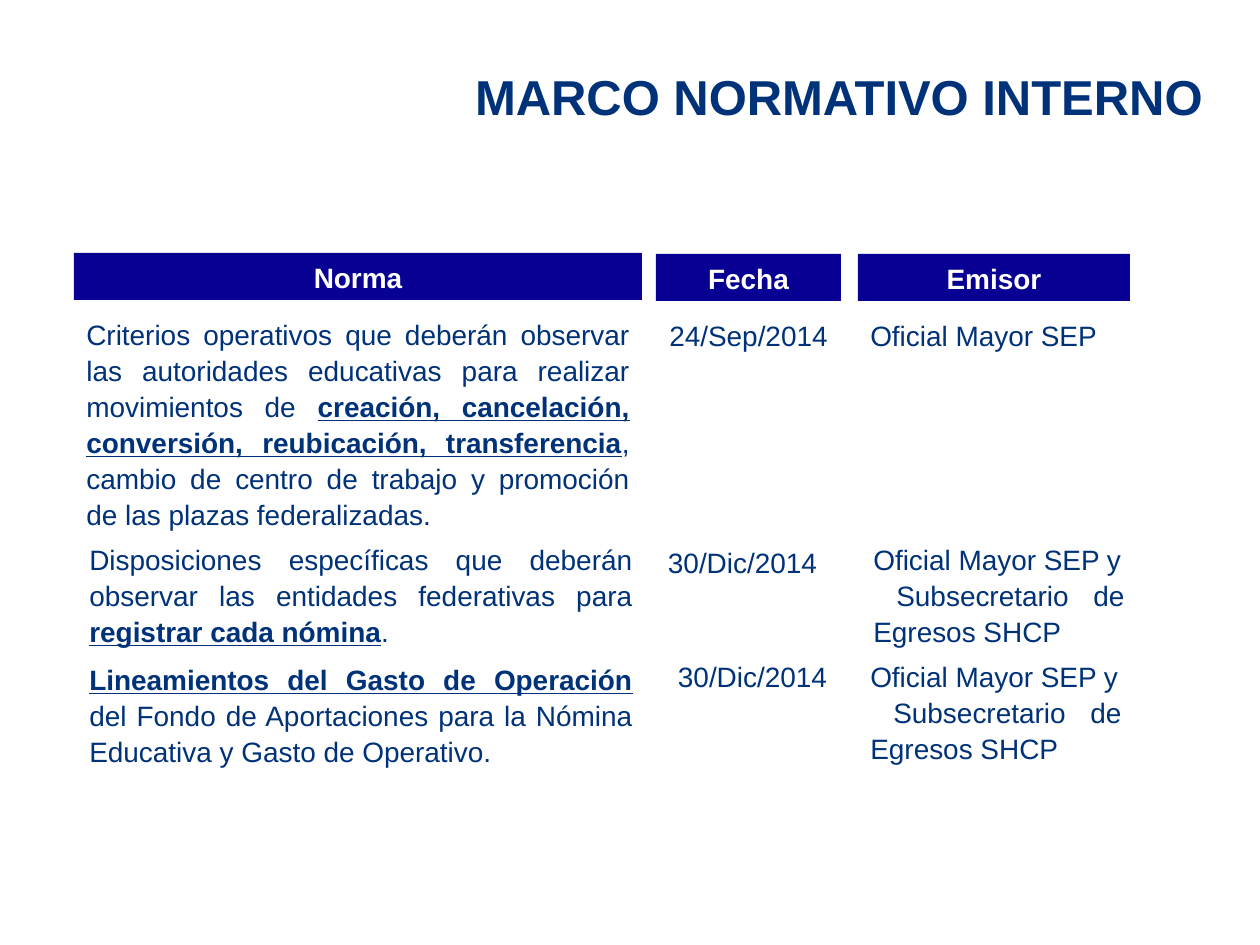
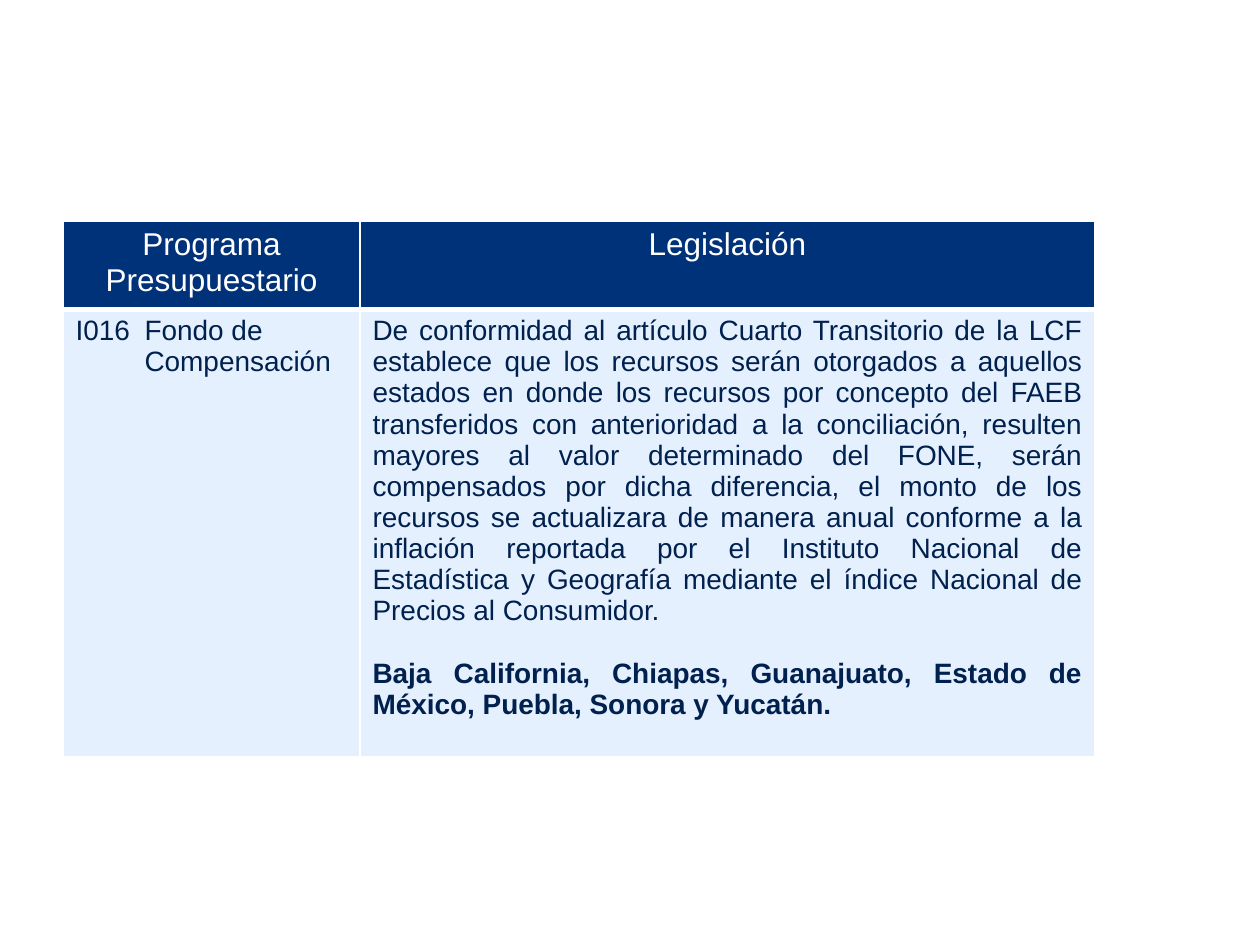
from dataclasses import dataclass

from lxml import etree
from pptx import Presentation
from pptx.dml.color import RGBColor
from pptx.enum.shapes import MSO_SHAPE
from pptx.enum.text import MSO_ANCHOR, PP_ALIGN
from pptx.oxml.ns import qn
from pptx.util import Emu, Pt

CENTER, JUSTIFY = PP_ALIGN.CENTER, PP_ALIGN.JUSTIFY
LEFT, RIGHT = PP_ALIGN.LEFT, PP_ALIGN.RIGHT
MIDDLE = MSO_ANCHOR.MIDDLE
RECT = MSO_SHAPE.RECTANGLE
SCALE = 914400 / 126


@dataclass(frozen=True)
class Theme:
    font: str = "Arial"
    navy: str = "003279"
    header: str = "070092"
    ink: str = "00204E"
    pale: str = "E5F0FF"
    white: str = "FFFFFF"
    title: int = 28
    heading: int = 18
    body: int = 16
    leading: float = 1.07


THEME = Theme()

NORMAS = [
    [("Criterios operativos que deberán observar las autoridades educativas "
      "para realizar movimientos de ", False),
     ("creación, cancelación, conversión, reubicación, transferencia", True),
     (", cambio de centro de trabajo y promoción de las plazas "
      "federalizadas.", False)],
    [("Disposiciones específicas que deberán observar las entidades "
      "federativas para ", False),
     ("registrar cada nómina", True),
     (".", False)],
    [("Lineamientos del Gasto de Operación ", True),
     ("del Fondo de Aportaciones para la Nómina Educativa y Gasto de "
      "Operativo.", False)],
]
LEGISLACION = (
    "De conformidad al artículo Cuarto Transitorio de la LCF establece que "
    "los recursos serán otorgados a aquellos estados en donde los recursos "
    "por concepto del FAEB transferidos con anterioridad a la conciliación, "
    "resulten mayores al valor determinado del FONE, serán compensados por "
    "dicha diferencia, el monto de los recursos se actualizara de manera "
    "anual conforme a la inflación reportada por el Instituto Nacional de "
    "Estadística y Geografía mediante el índice Nacional de Precios al "
    "Consumidor."
)
ESTADOS = ("Baja California, Chiapas, Guanajuato, Estado de México, Puebla, "
           "Sonora y Yucatán.")


def px(n):
    return Emu(round(n * SCALE))


def box(*lengths):
    return [px(n) for n in lengths]


def rgb(color):
    return RGBColor.from_string(color)


def add_run(p, text, size, color, bold=False, underline=False):
    r = p.add_run()
    r.text = text
    r.font.name = THEME.font
    r.font.size = Pt(size)
    r.font.color.rgb = rgb(color)
    r.font.bold = bold
    r.font.underline = underline


def set_indent(p, left, first):
    pPr = p._p.get_or_add_pPr()
    pPr.set("marL", str(px(left)))
    pPr.set("indent", str(px(first)))


def add_text(s, at, align):
    tf = s.shapes.add_textbox(*box(*at)).text_frame
    tf.word_wrap = True
    p = tf.paragraphs[0]
    p.alignment = align
    return tf, p


def add_title(s, text, at):
    tf, p = add_text(s, at, RIGHT)
    tf.vertical_anchor = MIDDLE
    add_run(p, text, THEME.title, THEME.navy, bold=True)


def add_header(s, text, at):
    sp = s.shapes.add_shape(RECT, *box(*at))
    sp.shadow.inherit = False
    sp.fill.solid()
    sp.fill.fore_color.rgb = rgb(THEME.header)
    sp.line.fill.background()
    p = sp.text_frame.paragraphs[0]
    p.alignment = CENTER
    p.line_spacing = THEME.leading
    add_run(p, text, THEME.body, THEME.white, bold=True)


def add_norma(s, runs, at):
    _, p = add_text(s, at, JUSTIFY)
    p.line_spacing = THEME.leading
    for text, key in runs:
        add_run(p, text, THEME.body, THEME.navy, key, key)


def add_fecha(s, text, at):
    _, p = add_text(s, at, CENTER)
    p.line_spacing = THEME.leading
    add_run(p, text, THEME.body, THEME.navy)


def add_emisor(s, lines, at):
    tf, p = add_text(s, at, JUSTIFY)
    for i, line in enumerate(lines):
        if i:
            p = tf.add_paragraph()
            p.alignment = JUSTIFY
            set_indent(p, 0, 23)
        p.line_spacing = THEME.leading
        add_run(p, line, THEME.body, THEME.navy)


def style_cell(cell, fill, top, bottom):
    tcPr = cell._tc.get_or_add_tcPr()
    for side, width in (("L", 1), ("R", 1), ("T", top), ("B", bottom)):
        ln = etree.SubElement(tcPr, qn(f"a:ln{side}"), w=str(Pt(width)))
        solid = etree.SubElement(ln, qn("a:solidFill"))
        etree.SubElement(solid, qn("a:srgbClr"), val=THEME.white)
    cell.fill.solid()
    cell.fill.fore_color.rgb = rgb(fill)


def fill_cell(cell, text, align, size, color):
    p = cell.text_frame.paragraphs[0]
    p.alignment = align
    add_run(p, text, size, color)
    return p


def add_program_table(s, at, widths, heights):
    table = s.shapes.add_table(2, 2, *box(*at)).table
    for col, width in zip(table.columns, widths):
        col.width = px(width)
    for row, height in zip(table.rows, heights):
        row.height = px(height)
    for i, text in enumerate(("Programa Presupuestario", "Legislación")):
        style_cell(table.cell(0, i), THEME.navy, 1, 3)
        style_cell(table.cell(1, i), THEME.pale, 3, 1)
        fill_cell(table.cell(0, i), text, CENTER, THEME.heading, THEME.white)

    p = fill_cell(table.cell(1, 0), "I016\tFondo de Compensación", LEFT,
                  THEME.body, THEME.ink)
    set_indent(p, 69, -69)
    legislation = table.cell(1, 1)
    fill_cell(legislation, LEGISLACION, JUSTIFY, THEME.body, THEME.ink)
    p = legislation.text_frame.add_paragraph()
    p.alignment = JUSTIFY
    p.space_before = Pt(18)
    add_run(p, ESTADOS, THEME.body, THEME.ink, bold=True)


def build_framework(s):
    add_title(s, "MARCO NORMATIVO INTERNO", (461, 66, 754, 59))
    for text, x, y, w in (("Norma", 74, 253, 568), ("Fecha", 656, 254, 185),
                          ("Emisor", 858, 254, 272)):
        add_header(s, text, (x, y, w, 47))

    for runs, x, y, h in zip(NORMAS, (74, 77, 77), (309, 534, 654),
                             (217, 115, 115)):
        add_norma(s, runs, (x, y, 568, h))
    for text, x, y in (("24/Sep/2014", 656, 310), ("30/Dic/2014", 650, 537),
                       ("30/Dic/2014", 660, 651)):
        add_fecha(s, text, (x, y, 185, 47))
    joint = ("Oficial Mayor SEP y", "Subsecretario de Egresos SHCP")
    for lines, x, y, h in ((("Oficial Mayor SEP",), 858, 310, 47),
                           (joint, 861, 534, 115), (joint, 858, 651, 115)):
        add_emisor(s, lines, (x, y, 276, h))


def build_program(s):
    add_program_table(s, (63, 221, 1032, 530), (297, 735), (82, 448))


def main():
    prs = Presentation()
    prs.slide_width, prs.slide_height = px(1260), px(945)
    for build in (build_framework, build_program):
        build(prs.slides.add_slide(prs.slide_layouts[6]))
    prs.save("out.pptx")


if __name__ == "__main__":
    main()
